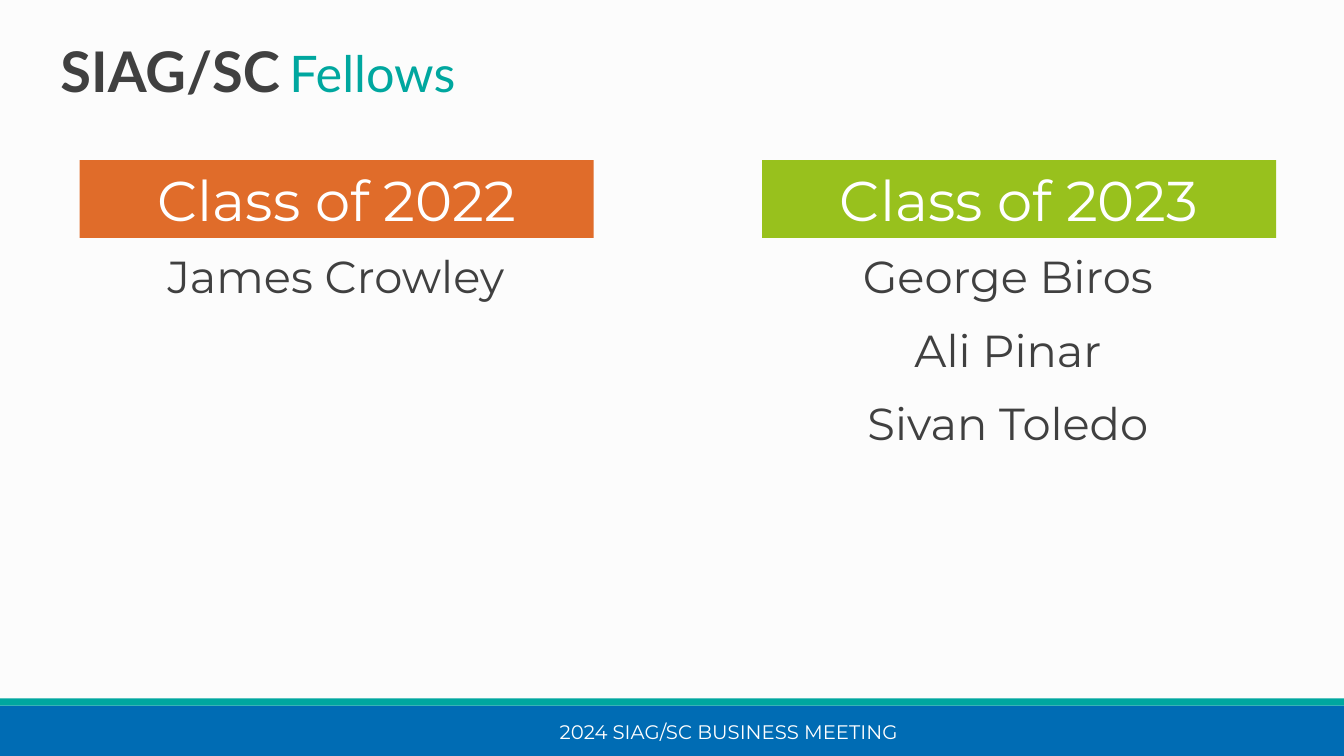
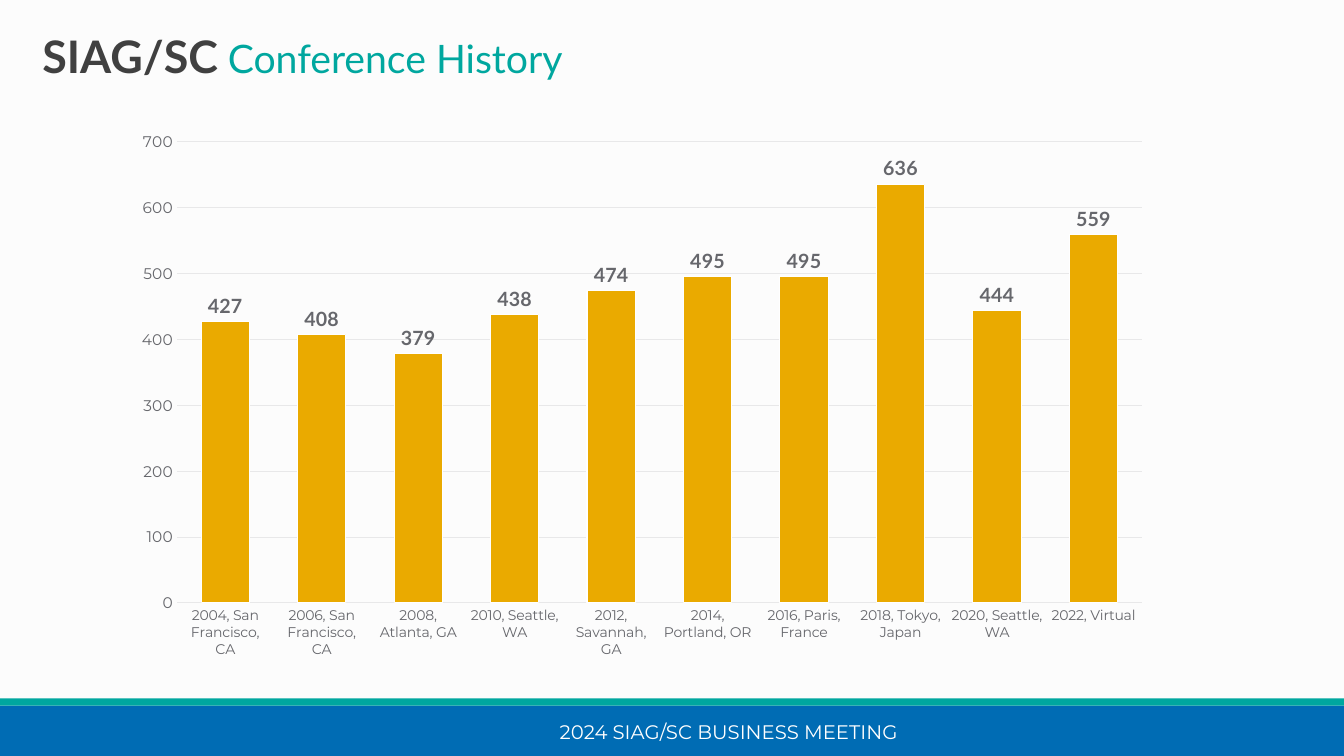
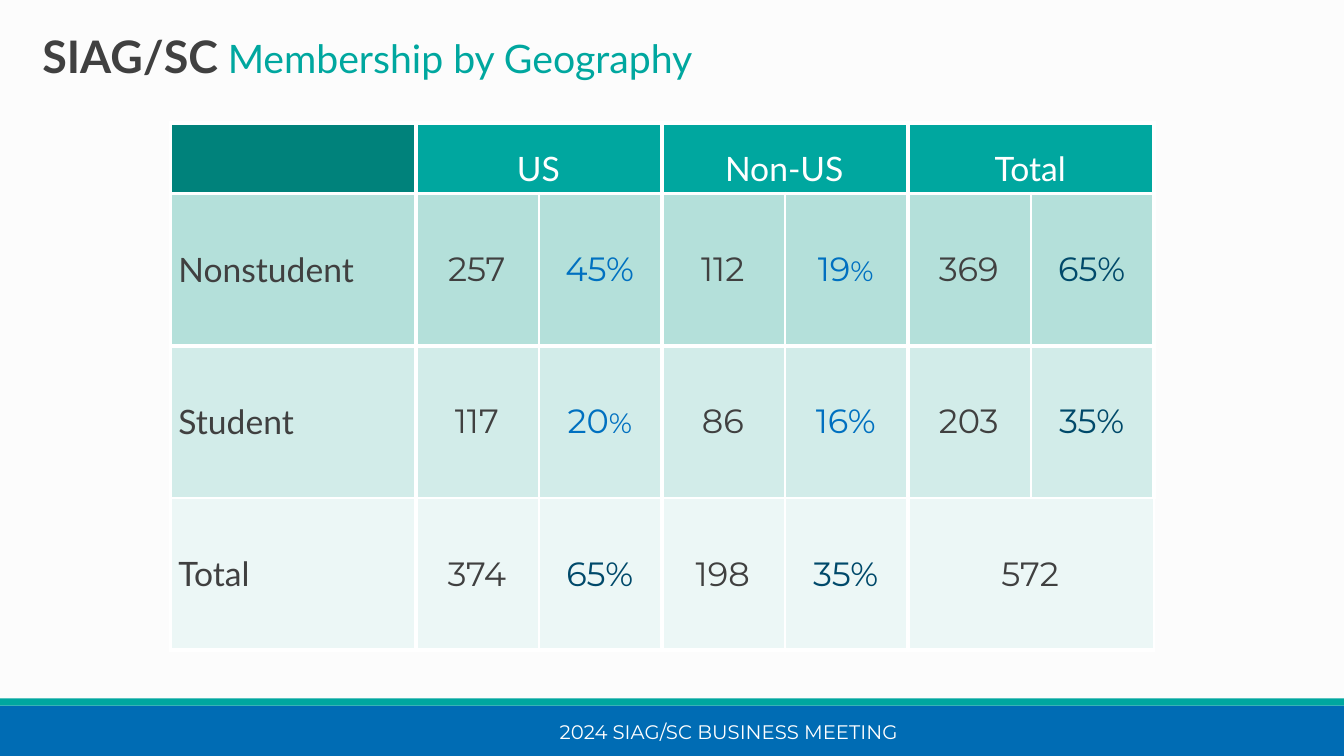
import pptx
import pptx.util
import pptx.dml.color
import pptx.chart.data
import pptx.enum.chart
import pptx.enum.shapes
import pptx.enum.text
from dataclasses import dataclass
from lxml import etree

ALIGN = pptx.enum.text.PP_ALIGN
ANCHOR = pptx.enum.text.MSO_ANCHOR
COLUMNS, ROWS = 160, 90


@dataclass(frozen=True)
class Theme:
    # Colours
    paper: str = "FCFCFC"
    white: str = "FFFFFF"
    ink: str = "404040"
    blue: str = "006CB4"
    teal: str = "00A79F"
    deep_teal: str = "00827B"
    orange: str = "E06C2A"
    green: str = "98C11D"
    gold: str = "EAAA00"
    axis_text: str = "66676C"
    grid_line: str = "E8E8E9"
    share: str = "0070C0"
    total_share: str = "00496A"
    row_tints: tuple = ("B4E0DA", "D2ECE9", "ECF7F6")
    # Fonts and type sizes
    head: str = "Lato"
    body: str = "Montserrat"
    banner_size: int = 40
    name_size: int = 32
    cell_size: int = 24
    small_percent: int = 20
    footer_size: int = 14


THEME = Theme()


def rgb(colour):
    return pptx.dml.color.RGBColor.from_string(colour)


def style_font(font, size, face, colour, bold=False):
    font.size = pptx.util.Pt(size)
    font.name = face
    font.color.rgb = rgb(colour)
    font.bold = bold


def write(frame, text, size=24, face=THEME.body, colour=THEME.ink, bold=False,
          align=ALIGN.LEFT, anchor=ANCHOR.TOP, before=0, after=0):
    """Each line of text is a string or a list of (string, overrides) runs."""
    frame.word_wrap = True
    frame.vertical_anchor = anchor
    lines = [text] if isinstance(text, str) else text
    for number, line in enumerate(lines):
        paragraph = frame.add_paragraph() if number else frame.paragraphs[0]
        paragraph.alignment = align
        paragraph.space_before = pptx.util.Pt(before if number else 0)
        paragraph.space_after = pptx.util.Pt(after)
        for words, changes in [(line, {})] if isinstance(line, str) else line:
            run = paragraph.add_run()
            run.text = words
            look = dict(size=size, face=face, colour=colour, bold=bold)
            style_font(run.font, **{**look, **changes})


def set_borders(cell, left, right, top, bottom):
    properties = cell._tc.get_or_add_tcPr()
    space = properties.nsmap["a"]
    sides = zip(("lnL", "lnR", "lnT", "lnB"), (left, right, top, bottom))
    for position, (side, points) in enumerate(sides):
        line = etree.Element(f"{{{space}}}{side}", w=str(pptx.util.Pt(points)))
        fill = etree.SubElement(line, f"{{{space}}}solidFill")
        etree.SubElement(fill, f"{{{space}}}srgbClr", val=THEME.white)
        properties.insert(position, line)


class Deck:
    def __init__(self):
        self.file = pptx.Presentation()
        self.file.slide_width = pptx.util.Inches(13.33)
        self.file.slide_height = pptx.util.Inches(7.5)
        paper = self.file.slide_master.background.fill
        paper.solid()
        paper.fore_color.rgb = rgb(THEME.paper)
        self.slide = None

    def across(self, columns):
        return round(self.file.slide_width * columns / COLUMNS)

    def down(self, rows):
        return round(self.file.slide_height * rows / ROWS)

    def place(self, left, top, width, height):
        return (self.across(left), self.down(top),
                self.across(width), self.down(height))

    def start(self, topic, box, group_size, topic_size):
        """Open a slide with its bands, footer and two-part title."""
        self.slide = self.file.slides.add_slide(self.file.slide_layouts[5])
        self.band((0, 84, 160, 6), THEME.blue)
        self.band((0, 83.16, 160, 0.84), THEME.teal)
        self.text((44.76, 84.72, 84, 4.8), "2024 SIAG/SC BUSINESS MEETING",
                  size=THEME.footer_size, colour=THEME.white,
                  align=ALIGN.CENTER, anchor=ANCHOR.MIDDLE)
        title = self.slide.shapes.title
        title.left, title.top, title.width, title.height = self.place(*box)
        write(title.text_frame,
              [[("SIAG/SC", dict(size=group_size, bold=True)),
                (" ", dict(size=28, bold=True)),
                (topic, dict(size=topic_size, colour=THEME.teal))]],
              face=THEME.head)
        title.text_frame.auto_size = pptx.enum.text.MSO_AUTO_SIZE.NONE

    def band(self, box, colour):
        band = self.slide.shapes.add_shape(
            pptx.enum.shapes.MSO_SHAPE.RECTANGLE, *self.place(*box))
        band.shadow.inherit = False
        band.fill.solid()
        band.fill.fore_color.rgb = rgb(colour)
        band.line.fill.background()
        return band

    def text(self, box, words, **look):
        area = self.slide.shapes.add_textbox(*self.place(*box))
        write(area.text_frame, words, **look)

    def fellows(self, banner_left, names_left, year, colour, names):
        """Add a class banner with the names of its fellows below."""
        banner = self.band((banner_left, 19.08, 61.2, 9.24), colour)
        write(banner.text_frame, f"Class of {year}", size=THEME.banner_size,
              colour=THEME.white, align=ALIGN.CENTER)
        self.text((names_left, 29.04, 80, 52.9), names, size=THEME.name_size,
                  align=ALIGN.CENTER, before=12, after=2)

    def columns(self, box, attendance):
        data = pptx.chart.data.CategoryChartData()
        data.categories = [place for place, _ in attendance]
        data.add_series("Series 1", [count for _, count in attendance])
        chart = self.slide.shapes.add_chart(
            pptx.enum.chart.XL_CHART_TYPE.COLUMN_CLUSTERED,
            *self.place(*box), data).chart
        chart.has_title = chart.has_legend = False
        style_font(chart.font, 10, THEME.body, THEME.axis_text)

        # Axes
        places, counts = chart.category_axis, chart.value_axis
        for axis, size in ((places, 10), (counts, 11)):
            axis.major_tick_mark = pptx.enum.chart.XL_TICK_MARK.NONE
            axis.minor_tick_mark = pptx.enum.chart.XL_TICK_MARK.NONE
            style_font(axis.tick_labels.font, size, THEME.body, THEME.axis_text)
        counts.minimum_scale, counts.maximum_scale = 0, 700
        counts.major_unit = 100
        counts.format.line.fill.background()
        for line in (places.format.line, counts.major_gridlines.format.line):
            line.color.rgb = rgb(THEME.grid_line)
            line.width = pptx.util.Pt(0.75)

        # Columns and their labels
        plot = chart.plots[0]
        plot.gap_width, plot.overlap = 100, -24
        plot.vary_by_categories = False
        series = plot.series[0]
        series.format.fill.solid()
        series.format.fill.fore_color.rgb = rgb(THEME.gold)
        series.format.line.color.rgb = rgb(THEME.white)
        series.format.line.width = pptx.util.Pt(0.75)
        labels = series.data_labels
        labels.show_value = True
        labels.position = pptx.enum.chart.XL_LABEL_POSITION.OUTSIDE_END
        style_font(labels.font, 14, THEME.head, THEME.axis_text, bold=True)

    def membership(self, left, top, regions, groups):
        """Add a table with a count and a share for each region."""
        unit, head_height, row_height = 14.64, 8.4, 18.12
        last_row, last_column = len(groups), 2 * len(regions)
        box = (left, top, unit * (last_column + 2),
               head_height + row_height * last_row)
        table = self.slide.shapes.add_table(
            last_row + 1, last_column + 1, *self.place(*box)).table
        table.first_row = table.horz_banding = False
        for number, column in enumerate(table.columns):
            column.width = self.across(unit if number else 2 * unit)
        for number, row in enumerate(table.rows):
            row.height = self.down(row_height if number else head_height)

        # Fills and borders, with thin lines inside each region
        for r, row in enumerate(table.rows):
            for c, cell in enumerate(row.cells):
                colour = THEME.row_tints[r - 1] if r else (
                    THEME.teal if c else THEME.deep_teal)
                cell.fill.solid()
                cell.fill.fore_color.rgb = rgb(colour)
                cell.margin_left = pptx.util.Inches(0.08)
                inner = r > 0 and c > 0
                set_borders(cell,
                            left=1.5 if inner and c % 2 == 0 else 3,
                            right=1.5 if inner and c % 2 else 3,
                            top=1 if r == last_row else 3,
                            bottom=1 if r == last_row - 1 else 3)

        # Region headings
        for number, region in enumerate(regions):
            heading = table.cell(0, 2 * number + 1)
            heading.merge(table.cell(0, 2 * number + 2))
            write(heading.text_frame, region, face=THEME.head,
                  colour=THEME.white, align=ALIGN.CENTER)
            heading.vertical_anchor = ANCHOR.BOTTOM
        table.cell(last_row, last_column - 1).merge(
            table.cell(last_row, last_column))

        # Group names, counts and shares
        for r, (group, *figures) in enumerate(groups, 1):
            write(table.cell(r, 0).text_frame, group, face=THEME.head)
            for c, figure in enumerate(figures, 1):
                colour = THEME.ink
                if c % 2 == 0:
                    in_total = r == last_row or c == last_column
                    colour = THEME.total_share if in_total else THEME.share
                if figure in ("19%", "20%"):
                    figure = [[(figure[:-1], {}),
                               ("%", dict(size=THEME.small_percent))]]
                write(table.cell(r, c).text_frame, figure,
                      size=THEME.cell_size, colour=colour, align=ALIGN.CENTER)
            for cell in table.rows[r].cells:
                cell.vertical_anchor = ANCHOR.MIDDLE


def main():
    deck = Deck()

    # Fellows
    deck.start("Fellows", (6, 3.72, 105.5, 9.24), 40, 36)
    deck.fellows(9.48, 0, 2022, THEME.orange, ["James Crowley"])
    deck.fellows(90.72, 80, 2023, THEME.green,
                 ["George Biros", "Ali Pinar", "Sivan Toledo"])

    # Conference history
    compact_title = (3.84, 2.76, 126, 7.68)
    deck.start("Conference History", compact_title, 32, 28)
    deck.columns((14.4, 14.4, 124, 65.16), [
        ("2004, San Francisco, CA", 427),
        ("2006, San Francisco, CA", 408),
        ("2008, Atlanta, GA", 379),
        ("2010, Seattle, WA", 438),
        ("2012, Savannah, GA", 474),
        ("2014, Portland, OR", 495),
        ("2016, Paris, France", 495),
        ("2018, Tokyo, Japan", 636),
        ("2020, Seattle, WA", 444),
        ("2022, Virtual", 559)])

    # Membership by geography
    deck.start("Membership by Geography", compact_title, 32, 28)
    deck.membership(20.28, 14.64, ["US", "Non-US", "Total"], [
        ("Nonstudent", "257", "45%", "112", "19%", "369", "65%"),
        ("Student", "117", "20%", "86", "16%", "203", "35%"),
        ("Total", "374", "65%", "198", "35%", "572")])

    deck.file.save("out.pptx")


if __name__ == "__main__":
    main()
